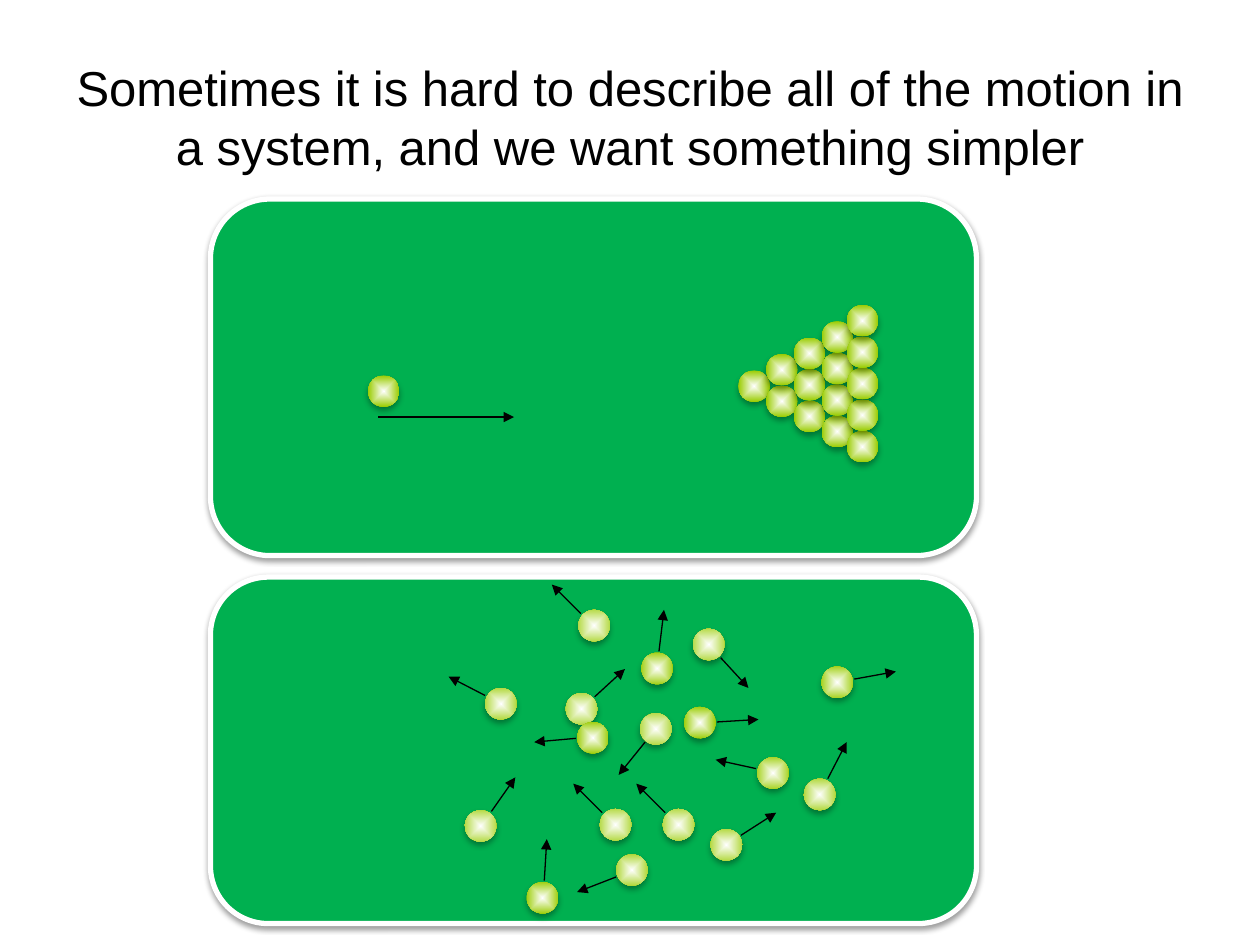
from math import cos, radians, sin

from pptx import Presentation
from pptx.dml.color import RGBColor as RGB
from pptx.enum.shapes import MSO_CONNECTOR as LINK, MSO_SHAPE as SHAPE
from pptx.enum.text import MSO_ANCHOR as ANCHOR, PP_ALIGN as ALIGN
from pptx.oxml import parse_xml
from pptx.oxml.ns import nsdecls, qn
from pptx.util import Pt

PX = 9144
BALL = 25
HEX = {"felt": "00B050", "rim": "FFFFFF", "ball": "99CC00", "ink": "000000"}


class Board:
    font = "Arial"

    def __init__(self, slide):
        self.slide = slide
        self.shapes = slide.shapes

    def group(self):
        self.shapes = self.slide.shapes.add_group_shape().shapes

    def shade(self, shape, alpha, blur, dist):
        shape.shadow.inherit = False
        shape._element.spPr.find(qn("a:effectLst")).append(parse_xml(
            f'<a:outerShdw {nsdecls("a")} blurRad="{Pt(blur)}" dist="{Pt(dist)}" '
            f'dir="5400000" rotWithShape="0"><a:srgbClr val="{HEX["ink"]}">'
            f'<a:alpha val="{alpha * 1000}"/></a:srgbClr></a:outerShdw>'))

    def title(self, text, x, y, w, h, size):
        box = self.shapes.add_textbox(x * PX, y * PX, w * PX, h * PX)
        frame = box.text_frame
        frame.word_wrap = True
        frame.vertical_anchor = ANCHOR.MIDDLE
        frame.text = text
        para = frame.paragraphs[0]
        para.alignment = ALIGN.CENTER
        font = para.runs[0].font
        font.name, font.size = self.font, Pt(size)
        font.color.rgb = RGB.from_string(HEX["ink"])

    def table(self, x, y, w, h):
        felt = self.shapes.add_shape(
            SHAPE.ROUNDED_RECTANGLE, x * PX, y * PX, w * PX, h * PX)
        felt.fill.solid()
        felt.fill.fore_color.rgb = RGB.from_string(HEX["felt"])
        felt.line.color.rgb = RGB.from_string(HEX["rim"])
        felt.line.width = Pt(3)
        self.shade(felt, 38, 3.1, 1.6)

    def ball(self, x, y, turn=0):
        ball = self.shapes.add_shape(
            SHAPE.OVAL, x * PX, y * PX, BALL * PX, BALL * PX)
        ball.rotation = turn
        ball.fill.background()
        ball.line.fill.background()
        props = ball._element.spPr
        props.replace(props.find(qn("a:noFill")), parse_xml(
            f'<a:gradFill {nsdecls("a")} rotWithShape="1"><a:gsLst>'
            f'<a:gs pos="0"><a:srgbClr val="{HEX["rim"]}"/></a:gs>'
            f'<a:gs pos="100000"><a:srgbClr val="{HEX["ball"]}"/></a:gs></a:gsLst>'
            '<a:path path="shape"><a:fillToRect l="50000" t="50000" r="50000" '
            'b="50000"/></a:path></a:gradFill>'))
        self.shade(ball, 32, 3.5, 2.2)

    def arrow(self, x1, y1, x2, y2):
        line = self.shapes.add_connector(
            LINK.STRAIGHT, x1 * PX, y1 * PX, x2 * PX, y2 * PX)
        line.line.color.rgb = RGB.from_string(HEX["ink"])
        line.line.width = Pt(0.75)
        props = line._element.spPr
        props.find(qn("a:ln")).append(
            parse_xml(f'<a:tailEnd {nsdecls("a")} type="triangle"/>'))
        props.append(parse_xml(f'<a:effectLst {nsdecls("a")}/>'))

    def mover(self, x, y, turn):
        self.ball(x, y, turn)
        way = radians(turn + 90)
        ends = [round(mid + BALL / 2 + reach * part)
                for reach in (14, 47)
                for mid, part in ((x, cos(way)), (y, sin(way)))]
        self.arrow(*ends)


def main():
    deck = Presentation()
    deck.slide_width, deck.slide_height = 1000 * PX, 750 * PX
    board = Board(deck.slides.add_slide(deck.slide_layouts[6]))

    board.table(167, 158, 608, 283)
    board.title("Sometimes it is hard to describe all of the motion in a system, "
                "and we want something simpler", 50, 30, 900, 125, 28)
    for col, x in enumerate((586, 608, 630, 652, 672)):
        for row in range(col, -1, -1):
            board.ball(x, 294 - 13 * col + BALL * row)
    board.ball(292, 298)
    board.arrow(300, 331, 408, 331)

    board.group()
    board.table(167, 458, 608, 275)
    movers = [
        (369, 643, 215.6), (385, 546, 116.8), (476, 642, 133.9),
        (601, 601, 102.6), (550, 499, 317.4), (564, 658, 237.6),
        (489, 678, 68.2), (543, 561, 266.5), (449, 550, 227.8),
        (508, 566, 39.2), (418, 700, 184.3), (638, 618, 206.7),
        (652, 529, 260.1), (526, 642, 133.9), (458, 573, 86),
        (459, 484, 133.9), (509, 518, 187.3),
    ]
    for x, y, turn in movers:
        board.mover(x, y, turn)

    deck.save("out.pptx")


if __name__ == "__main__":
    main()
